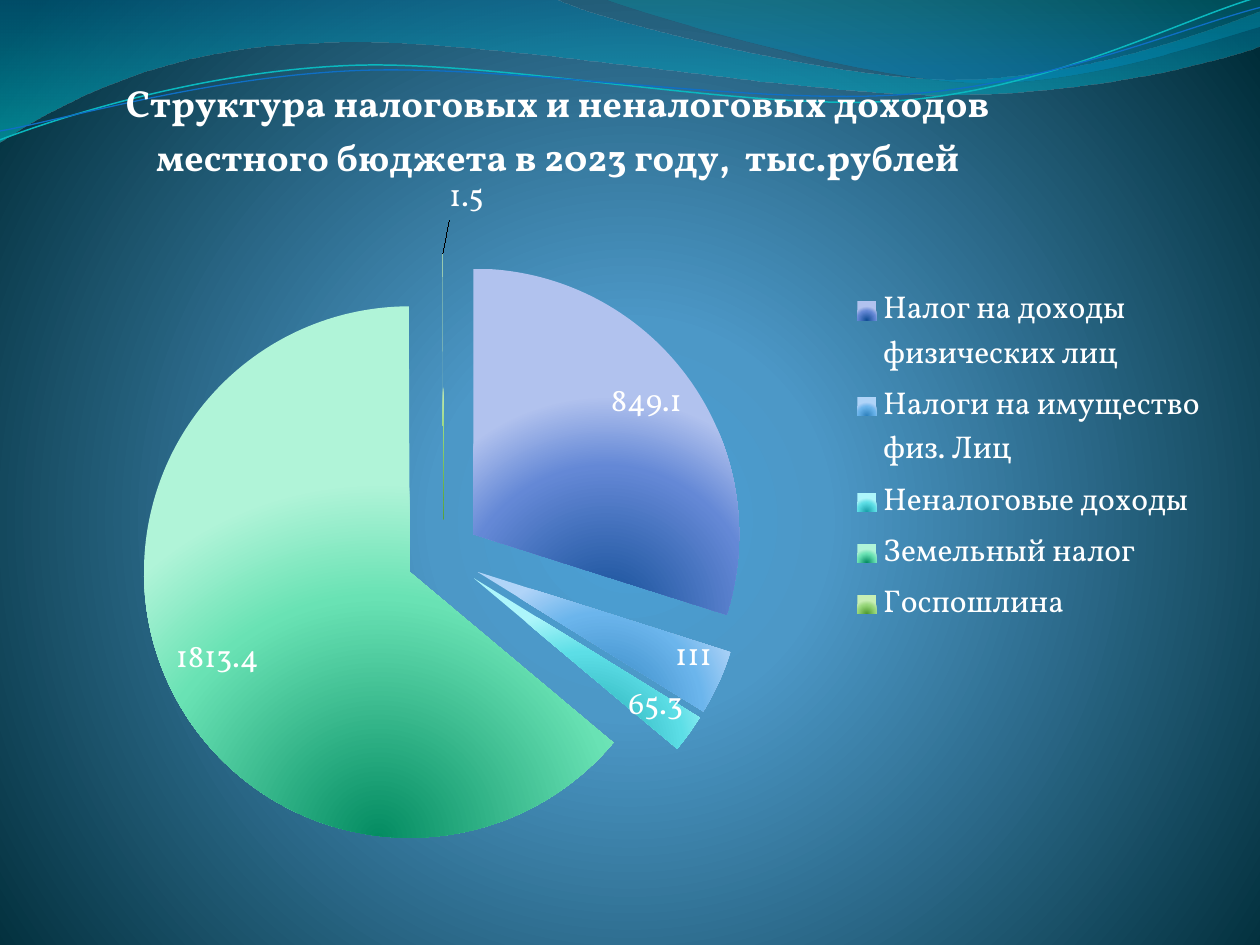
import dataclasses
import math

import lxml.etree
import pptx
import pptx.chart.data
import pptx.dml.color
import pptx.enum.chart
import pptx.oxml.ns
import pptx.util

Cm, Pt, qn = pptx.util.Cm, pptx.util.Pt, pptx.oxml.ns.qn
UNITS = 1000
INCH = Cm(2.54)

TITLE = ("Структура налоговых и неналоговых доходов "
         "местного бюджета в 2023 году,  тыс.рублей")
INCOME = [
    ("Налог на доходы физических лиц", 849.1),
    ("Налоги на имущество физ. Лиц", 111),
    ("Неналоговые доходы", 65.3),
    ("Земельный налог", 1813.4),
    ("Госпошлина", 1.5),
]
LARGE_WAVE = [
    (0, 0), (4.4, -0.01),
    (4.76, 0.17, 6.64, 0.63, 7.58, 0.63), (8.53, 0.63, 9.58, 0.26, 10, 0.09),
    (10.01, 0.36),
    (9.83, 0.44, 8.7, 0.76, 7.46, 0.75), (6.22, 0.75, 3.82, 0.28, 2.57, 0.34),
    (1.29, 0.36, 0.46, 0.83, -0.01, 1.13), (0, 0),
]
SMALL_WAVE = [
    (4.79, -0.01),
    (5.09, 0.11, 6.82, 0.62, 7.69, 0.65), (8.56, 0.69, 9.61, 0.32, 10, 0.21),
    (10, 0), (4.79, -0.01),
]
TEAL_CURVE = [
    (0, 1.11),
    (0.48, 0.93, 1.58, 0.57, 2.77, 0.52), (3.95, 0.47, 5.93, 0.89, 7.13, 0.8),
    (8.33, 0.71, 9.38, 0.15, 9.98, -0.02),
]
BLUE_CURVE = [
    (0, 1.04),
    (0.47, 0.96, 1.64, 0.61, 2.83, 0.56), (4.03, 0.51, 5.97, 0.84, 7.17, 0.75),
    (8.36, 0.67, 9.41, 0.21, 10, 0.06),
]


@dataclasses.dataclass(frozen=True)
class Theme:
    font: str = "Vollkorn"
    text: str = "FFFFFF"
    title_size: float = 21.6
    body_size: float = 18
    teal: str = "0AB8BF"
    blue: str = "0F6FC6"
    backdrop: tuple = ((0, "4AA0D6"), (25, "4C98C7"), (100, "002C38"))
    large_wave: tuple = ((0, "0074A1", 45), (100, "00C6CF", 55))
    small_wave: tuple = ((0, "00A1A9", 30), (80, "008BBF", 45))
    slices: tuple = (
        ("124E96", "6488D6", "B1C2EE"),
        ("2F82BE", "6BB5EC", "B0D4F8"),
        ("1AA0AA", "5CDEE6", "ADF6FB"),
        ("048C62", "69E2B4", "B0F4D8"),
        ("4F9A30", "98D87A", "C8EFB4"),
    )
    slice_stops: tuple = (0, 68, 100)


def add(parent, tag, **attrs):
    """Append a child element with the given attributes."""
    return lxml.etree.SubElement(parent, qn(tag), {k: str(v) for k, v in attrs.items()})


def turn(segments, degrees, pivot=(5, 0.57)):
    """Rotate every point of the segments clockwise about a pivot."""
    c, s = math.cos(math.radians(degrees)), math.sin(math.radians(degrees))
    px, py = pivot
    return [[value for x, y in zip(seg[::2], seg[1::2])
             for value in (px + (x - px) * c - (y - py) * s,
                           py + (x - px) * s + (y - py) * c)]
            for seg in segments]


class Deck:
    """Holds the theme and the current slide."""

    def __init__(self, theme):
        """Start a presentation with one blank slide."""
        self.theme = theme
        self.prs = pptx.Presentation()
        self.prs.slide_width, self.prs.slide_height = Cm(25.4), Cm(19.05)
        self.s = self.prs.slides.add_slide(self.prs.slide_layouts[6])

    def gradient(self, fill, root, stops, focus=None):
        """Give a fill a vertical gradient, or a circular one with a focus."""
        fill.gradient()
        grad = next(root.iter(qn("a:gradFill")))
        for child in list(grad):
            grad.remove(child)
        gs_list = add(grad, "a:gsLst")
        for pos, color, *alpha in stops:
            clr = add(add(gs_list, "a:gs", pos=pos * 1000), "a:srgbClr", val=color)
            for value in alpha:
                add(clr, "a:alpha", val=value * 1000)
        if focus:
            rect = {side: value * 1000 for side, value in zip("ltrb", focus)}
            add(add(grad, "a:path", path="circle"), "a:fillToRect", **rect)
        else:
            add(grad, "a:lin", ang=5400000, scaled=0)

    def background(self):
        """Fill the slide background."""
        self.gradient(self.s.background.fill, self.s.element,
                      self.theme.backdrop, (10, 110, 10, 100))

    def outline(self, segments, closed=False):
        """Draw an outline of straight and cubic segments."""
        segments = [[round(v * UNITS) for v in seg] for seg in segments]
        ends = [seg[-2:] for seg in segments]
        left, top = (min(values) for values in zip(*ends))
        builder = self.s.shapes.build_freeform(*ends[0], scale=INCH / UNITS)
        builder.add_line_segments(ends[1:], close=closed)
        sp = builder.convert_to_shape()
        sp.shadow.inherit = False
        for node, seg in zip(list(sp.element.iter(qn("a:lnTo"))), segments[1:]):
            if len(seg) == 6:
                node.tag = qn("a:cubicBezTo")
                node.remove(node[0])
                for x, y in zip(seg[::2], seg[1::2]):
                    add(node, "a:pt", x=x - left, y=y - top)
        return sp

    def wave(self, segments, stops):
        """Draw a closed gradient wave."""
        sp = self.outline(segments, True)
        sp.line.fill.background()
        self.gradient(sp.fill, sp.element, stops)

    def curve(self, segments, color, width, tilt=2.7):
        """Draw a tilted open curve."""
        sp = self.outline(turn(segments, tilt))
        sp.rotation = -tilt
        sp.fill.background()
        sp.line.color.rgb = pptx.dml.color.RGBColor.from_string(color)
        sp.line.width = Pt(width)

    def style(self, font, size, bold=False):
        """Apply the theme's type to a font."""
        font.name, font.size, font.bold = self.theme.font, Pt(size), bold
        font.color.rgb = pptx.dml.color.RGBColor.from_string(self.theme.text)

    def layout(self, parent, index, modes, **percent):
        """Set the manual layout of a chart part in percent."""
        for old in parent.findall(qn("c:layout")):
            parent.remove(old)
        node = add(parent, "c:layout")
        parent.insert(index, node)
        manual = add(node, "c:manualLayout")
        for key, value in modes.items():
            add(manual, f"c:{key}", val=value)
        for key, value in percent.items():
            add(manual, f"c:{key}", val=round(value / 100, 4))

    def pie(self, title, rows, left, top, width, height):
        """Add an exploded pie chart with title, legend and labels."""
        data = pptx.chart.data.CategoryChartData()
        data.categories = [name for name, _ in rows]
        data.add_series("Series 1", [value for _, value in rows])
        chart = self.s.shapes.add_chart(
            pptx.enum.chart.XL_CHART_TYPE.PIE, Cm(left), Cm(top),
            Cm(width), Cm(height), data).chart
        self.style(chart.font, self.theme.body_size)
        edge = {"xMode": "edge", "yMode": "edge"}

        def find(tag):
            return next(chart.element.iter(qn(tag)))

        chart.has_title = True
        r = chart.chart_title.text_frame.paragraphs[0].add_run()
        r.text = title
        self.style(r.font, self.theme.title_size, True)
        self.layout(find("c:title"), 1, edge, x=6.75, y=3.6)

        chart.has_legend = True
        chart.legend.position = pptx.enum.chart.XL_LEGEND_POSITION.RIGHT
        chart.legend.include_in_layout = False
        self.style(chart.legend.font, self.theme.body_size)
        self.layout(find("c:legend"), 1, edge, x=68.7, y=29, w=30, h=42)
        self.layout(find("c:plotArea"), 0, {"layoutTarget": "inner", **edge},
                    x=8.55, y=25.6, w=51.3, h=72.4)

        plot = chart.plots[0]
        plot.vary_by_categories = True
        series = plot.series[0]
        for i, colors in enumerate(self.theme.slices):
            fill = series.points[i].format.fill
            fill.solid()
            self.gradient(fill, list(chart.element.iter(qn("c:dPt")))[i],
                          zip(self.theme.slice_stops, colors), (50, 100, 50, 0))
        find("c:dPt").addprevious(add(find("c:ser"), "c:explosion", val=14))

        inside = pptx.enum.chart.XL_LABEL_POSITION.INSIDE_END
        labels = series.data_labels
        labels.show_value, labels.position = True, inside
        self.style(labels.font, self.theme.body_size)
        last = series.points[len(rows) - 1].data_label
        self.style(last.font, self.theme.body_size)
        last.position = inside
        self.layout(find("c:dLbl"), 1, {}, x=2, y=-10.1)


def main():
    """Build the slide and save it."""
    theme = Theme()
    deck = Deck(theme)
    deck.background()
    deck.wave(LARGE_WAVE, theme.large_wave)
    deck.wave(SMALL_WAVE, theme.small_wave)
    deck.curve(TEAL_CURVE, theme.teal, 0.85)
    deck.curve(BLUE_CURVE, theme.blue, 0.75)
    deck.pie(TITLE, INCOME, 0.79, 0.79, 23.83, 16.87)
    deck.prs.save("out.pptx")


if __name__ == "__main__":
    main()
